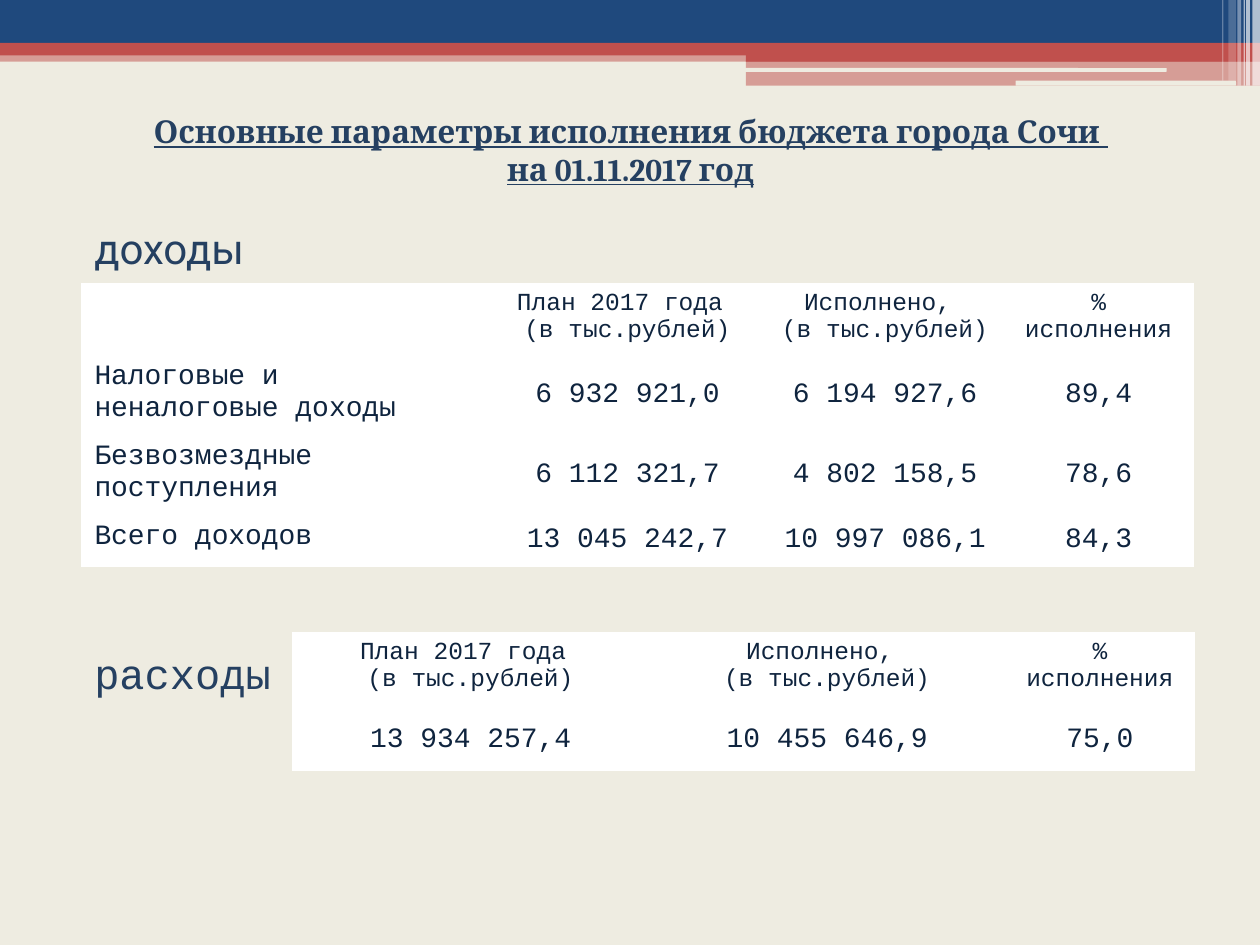
"""Build the slide on the Sochi city budget: income and spending tables."""
from lxml import etree
from pptx import Presentation, util as u
from pptx.dml.color import RGBColor
from pptx.enum import shapes, text
from pptx.oxml.ns import qn

NAVY, RED, CREAM, WHITE, INK, HEADING = "1F497D", "C0504D", "EEECE1", "FFFFFF", "0F243E", "254061"
CENTER, LEFT = text.PP_ALIGN.CENTER, text.PP_ALIGN.LEFT


def paint(fill, color, opacity=100):
    fill.solid()
    fill.fore_color.rgb = RGBColor.from_string(color)
    if opacity < 100:
        tint = fill._xPr.find(qn("a:solidFill"))[0]
        etree.SubElement(tint, qn("a:alpha"), val=str(opacity * 1000))


def write(frame, lines, align, color, **font):
    frame.word_wrap = True
    for index, line in enumerate(lines):
        para = frame.paragraphs[0] if index == 0 else frame.add_paragraph()
        para.alignment = align
        span = para.add_run()
        span.text = line
        span.font.color.rgb = RGBColor.from_string(color)
        for name, value in font.items():
            setattr(span.font, name, value)


deck = Presentation()
deck.slide_width, deck.slide_height = u.Inches(10), u.Inches(7.5)
page = deck.slides.add_slide(deck.slide_layouts[5])
paint(page.background.fill, CREAM)

RECT, ROUND = shapes.MSO_SHAPE.RECTANGLE, shapes.MSO_SHAPE.ROUNDED_RECTANGLE
bands = [
    (RECT, 0, 0.4, 10, 0.09, RED, 50),
    (RECT, 0, 0, 10, 0.34, NAVY, 100),
    (RECT, 0, 0.34, 10, 0.1, RED, 100),
    (RECT, 5.92, 0.39, 4.08, 0.1, RED, 100),
    (RECT, 5.92, 0.48, 4.08, 0.2, RED, 50),
    (ROUND, 5.91, 0.54, 3.35, 0.03, CREAM, 100),
    (ROUND, 8.06, 0.64, 1.75, 0.04, CREAM, 100),
    (RECT, 9.94, 0, 0.06, 0.68, WHITE, 65),
    (RECT, 9.89, 0, 0.03, 0.68, WHITE, 65),
    (RECT, 9.87, 0, 0.01, 0.68, WHITE, 60),
    (RECT, 9.82, 0, 0.03, 0.68, WHITE, 40),
    (RECT, 9.75, 0, 0.06, 0.64, WHITE, 20),
    (RECT, 9.7, 0, 0.01, 0.64, WHITE, 30),
]
for kind, left, top, width, height, color, opacity in bands:
    band = page.shapes.add_shape(kind, *map(u.Inches, (left, top, width, height)))
    band.shadow.inherit = False
    band.line.fill.background()
    paint(band.fill, color, opacity)

title = page.shapes.title
place = {"left": 0.24, "top": 0.84, "width": 9.53, "height": 0.71}
for name, value in place.items():
    setattr(title, name, u.Inches(value))
title.text_frame.vertical_anchor = text.MSO_ANCHOR.TOP
title.text_frame.auto_size = text.MSO_AUTO_SIZE.SHAPE_TO_FIT_TEXT
write(title.text_frame, ["Основные параметры исполнения бюджета города Сочи ", "на 01.11.2017 год"],
      CENTER, HEADING, name="Cambria", size=u.Pt(18), bold=True, underline=True)

for label, top, font in [("доходы", 1.72, "Roboto"), ("расходы", 5.09, "Courier New")]:
    box = page.shapes.add_textbox(*map(u.Inches, (0.65, top, 2.2, 0.5)))
    box.text_frame.auto_size = text.MSO_AUTO_SIZE.SHAPE_TO_FIT_TEXT
    write(box.text_frame, [label], LEFT, HEADING, name=font, size=u.Pt(24))

headers = ["План 2017 года \n(в тыс.рублей)", "Исполнено, \n(в тыс.рублей)", "% исполнения"]
income = [
    ["", *headers],
    ["Налоговые и неналоговые доходы", "6 932 921,0", "6 194 927,6", "89,4"],
    ["Безвозмездные поступления", "6 112 321,7", "4 802 158,5", "78,6"],
    ["Всего доходов", "13 045 242,7", "10 997 086,1", "84,3"],
]
spending = [headers, ["13 934 257,4", "10 455 646,9", "75,0"]]
tables = [
    (income, 0.65, 2.25, [3.23, 2.2, 1.89, 1.5], [0.41] * 4),
    (spending, 2.32, 5.02, [2.83, 2.83, 1.5], [0.62, 0.47]),
]
for rows, left, top, widths, heights in tables:
    size = (left, top, sum(widths), sum(heights))
    table = page.shapes.add_table(len(rows), len(widths), *map(u.Inches, size)).table
    table.first_row = table.horz_banding = False
    for column, width in zip(table.columns, widths):
        column.width = u.Inches(width)
    for r, (row, height) in enumerate(zip(rows, heights)):
        table.rows[r].height = u.Inches(height)
        for c, value in enumerate(row):
            cell = table.cell(r, c)
            for side in ("lnL", "lnR", "lnT", "lnB"):
                points = 3 if r == 0 and side == "lnB" else 1
                edge = etree.SubElement(cell._tc.get_or_add_tcPr(), qn(f"a:{side}"), w=str(u.Pt(points)))
                solid = etree.SubElement(edge, qn("a:solidFill"))
                etree.SubElement(solid, qn("a:srgbClr"), val=WHITE)
            paint(cell.fill, WHITE)
            is_label = rows is income and c == 0
            if r and not is_label:
                cell.vertical_anchor = text.MSO_ANCHOR.MIDDLE
            write(cell.text_frame, value.split("\n") if value else [], LEFT if is_label else CENTER,
                  INK, name="Courier New", size=u.Pt(16 if r else 14))

deck.save("out.pptx")
